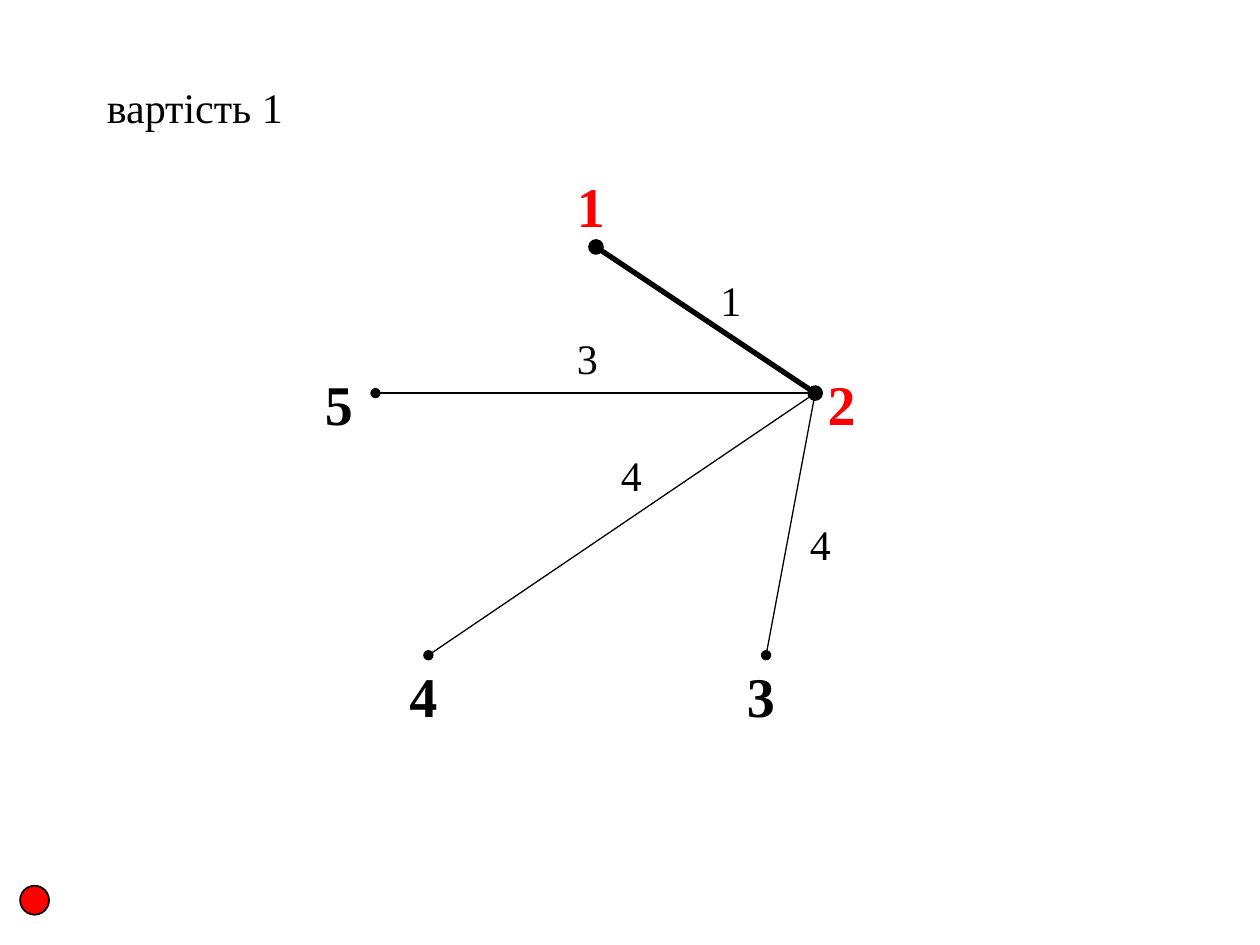
from pptx import Presentation
from pptx import util as u
from pptx.dml.color import RGBColor
from pptx.enum import shapes, text
from pptx.oxml.ns import qn
from lxml import etree

COLORS = {"ink": "000000", "chosen": "FF0000", "paper": "FFFFFF"}


class GraphSlide:
    font = "Times New Roman"
    label_width, label_height = 0.5, 0.47

    def __init__(self, slide):
        self.slide = slide

    def color(self, name):
        return RGBColor.from_string(COLORS[name])

    def words(self, frame, content, size, color="ink", bold=False,
              align=text.PP_ALIGN.LEFT, anchor=text.MSO_ANCHOR.TOP):
        frame.vertical_anchor = anchor
        paragraph = frame.paragraphs[0]
        paragraph.alignment = align
        run = paragraph.add_run()
        run.text = content
        run.font.name = self.font
        run.font.size = u.Pt(size)
        run.font.bold = bold
        run.font.color.rgb = self.color(color)

    def shape(self, parent, kind, left, top, width, height, fill):
        item = parent.shapes.add_shape(kind, u.Inches(left), u.Inches(top),
                                       u.Inches(width), u.Inches(height))
        item.shadow.inherit = False
        item.fill.solid()
        item.fill.fore_color.rgb = self.color(fill)
        item.line.fill.background()
        return item

    def label(self, parent, content, left, top, size, color="ink", bold=False,
              height=label_height):
        box = self.shape(parent, shapes.MSO_SHAPE.RECTANGLE, left, top,
                         self.label_width, height, "paper")
        self.words(box.text_frame, content, size, color, bold)
        return box

    def vertex(self, name, left, top, color="ink", height=label_height):
        return self.label(self.slide, name, left, top, 32, color, True, height)

    def edge(self, start, end, cost, cost_at, width):
        group = self.slide.shapes.add_group_shape()
        self.label(group, cost, *cost_at, 24)
        line = group.shapes.add_connector(
            shapes.MSO_CONNECTOR.STRAIGHT, *map(u.Inches, start + end))
        line.line.color.rgb = self.color("ink")
        line.line.width = u.Pt(width)
        properties = line.element.spPr
        outline = properties.find(qn("a:ln"))
        for tag in ("a:headEnd", "a:tailEnd"):
            etree.SubElement(outline, qn(tag), type="oval")
        etree.SubElement(properties, qn("a:effectLst"))

    def caption(self, content, left, top, width, height):
        box = self.slide.shapes.add_textbox(u.Inches(left), u.Inches(top),
                                            u.Inches(width), u.Inches(height))
        box.text_frame.word_wrap = False
        box.text_frame.auto_size = text.MSO_AUTO_SIZE.SHAPE_TO_FIT_TEXT
        self.words(box.text_frame, content, 24, align=text.PP_ALIGN.JUSTIFY,
                   anchor=text.MSO_ANCHOR.MIDDLE)

    def marker(self, left, top, size):
        dot = self.shape(self.slide, shapes.MSO_SHAPE.OVAL, left, top,
                         size, size, "chosen")
        dot.line.color.rgb = self.color("ink")
        dot.line.width = u.Pt(1)


def main():
    deck = Presentation()
    deck.slide_width, deck.slide_height = u.Inches(10), u.Inches(7.5)
    graph = GraphSlide(deck.slides.add_slide(deck.slide_layouts[6]))

    # Vertices; the ones already in the tree are red
    graph.vertex("2", 6.47, 2.88, "chosen")
    first = graph.vertex("1", 4.48, 1.31, "chosen", height=0.63)
    first.text_frame.margin_bottom = u.Inches(0.09)
    for name, left, top in (("5", 2.48, 2.88), ("3", 5.83, 5.2), ("4", 3.15, 5.2)):
        graph.vertex(name, left, top)

    # Edges from vertex 2: far end, cost, place of the cost, line width
    hub = (6.47, 3.12)
    for end, cost, cost_at, width in (
        ((2.98, 3.12), "3", (4.48, 2.59), 0.75),
        ((4.73, 1.96), "1", (5.62, 2.13), 3),
        ((3.4, 5.2), "4", (4.83, 3.52), 0.75),
        ((6.08, 5.2), "4", (6.33, 4.07), 0.75),
    ):
        graph.edge(hub, end, cost, cost_at, width)

    # Total cost and corner marker
    graph.caption("вартість 1", 0.75, 0.6, 1.61, 0.5)
    graph.marker(0.16, 7.03, 0.23)

    deck.save("out.pptx")


if __name__ == "__main__":
    main()
